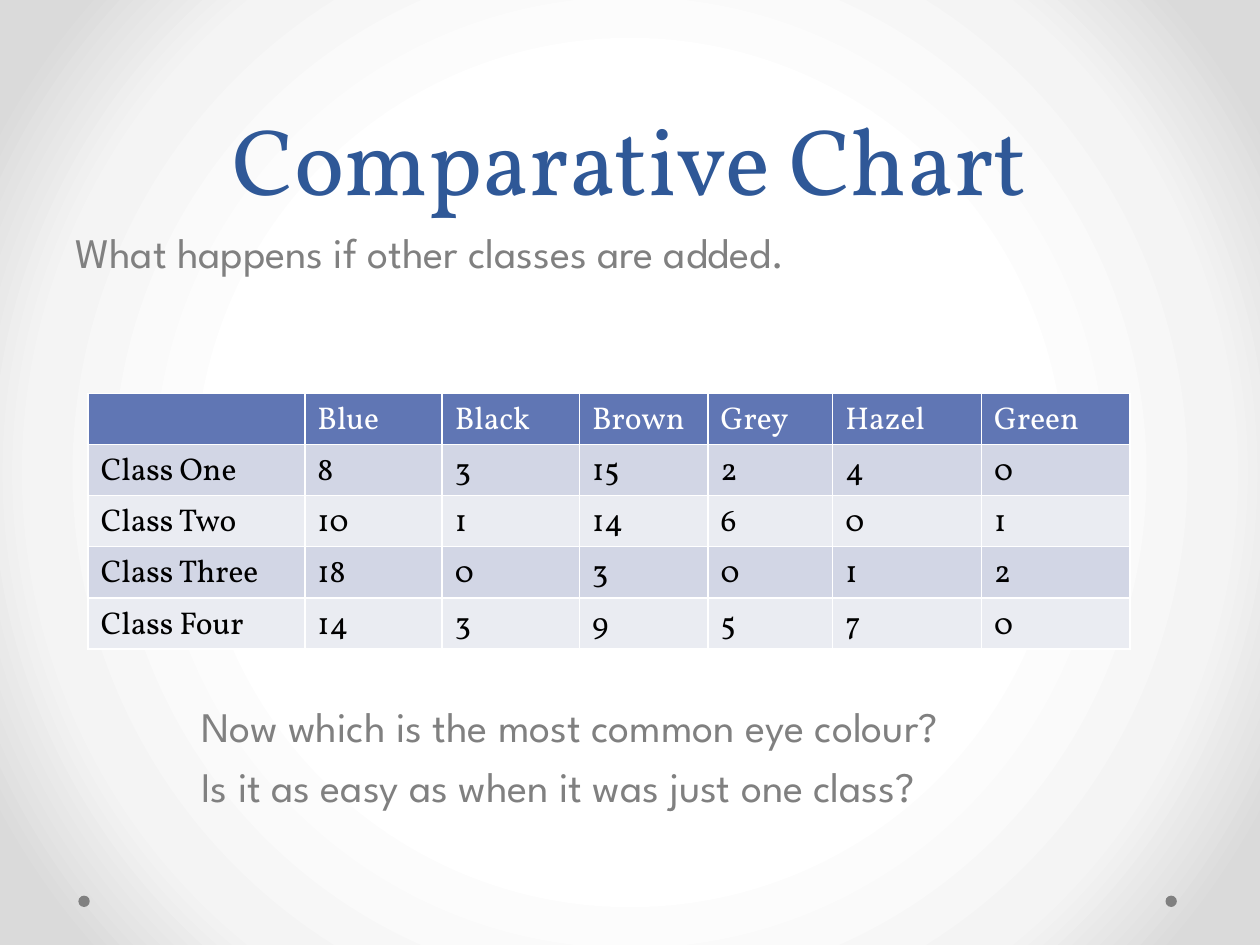
"""Builds a slide comparing eye colours across four classes."""
import pptx
import pptx.dml.color
import pptx.enum.shapes
import pptx.enum.text
import pptx.oxml
import pptx.oxml.ns
import pptx.util

Pt = pptx.util.Pt
RGBColor = pptx.dml.color.RGBColor

NAVY = RGBColor(0x2F, 0x58, 0x97)
GREY = RGBColor(0x80, 0x80, 0x80)
WHITE = RGBColor(0xFF, 0xFF, 0xFF)
BLACK = RGBColor(0x00, 0x00, 0x00)
HEADER = RGBColor(0x60, 0x76, 0xB4)
BANDS = [RGBColor(0xD2, 0xD6, 0xE5), RGBColor(0xEA, 0xEC, 0xF2)]
GLOW = [(50, "FFFFFF"), (76, "F4F4F4"), (92, "DADADA")]

EYE_COLOURS = ["", "Blue", "Black", "Brown", "Grey", "Hazel", "Green"]
CLASS_COUNTS = [
    ["Class One", 8, 3, 15, 2, 4, 0],
    ["Class Two", 10, 1, 14, 6, 0, 1],
    ["Class Three", 18, 0, 3, 0, 1, 2],
    ["Class Four", 14, 3, 9, 5, 7, 0],
]
COLUMN_WIDTHS = [123.8, 78.5, 78.5, 73.4, 71.3, 85, 85]
ROW_HEIGHT = 29.2
REMARKS = [
    ("What happens if other classes are added.", 5.5, 0),
    ("Now which is the most common eye colour?", 242, 72),
    ("Is it as easy as when it was just one class?", 5.5, 72),
]


class EyeColourSlide:
    styles = {
        "title": {"name": "Vollkorn", "size": Pt(54), "bold": False},
        "remark": {"name": "League Spartan", "size": Pt(24), "bold": False},
        "cell": {"name": "Vollkorn", "size": Pt(18), "bold": False},
    }

    def __init__(self, deck):
        self.slide = deck.slides.add_slide(deck.slide_layouts[5])

    def add_words(self, paragraph, words, style, colour):
        run = paragraph.add_run()
        run.text = words
        for attribute, value in self.styles[style].items():
            setattr(run.font, attribute, value)
        run.font.color.rgb = colour

    def background(self, stops):
        self.slide.background.fill.gradient()
        gradient = self.slide.element.find(".//" + pptx.oxml.ns.qn("a:gradFill"))
        marks = "".join(
            f'<a:gs pos="{position * 1000}"><a:srgbClr val="{colour}"/></a:gs>'
            for position, colour in stops
        )
        glow = pptx.oxml.parse_xml(
            f'<a:gradFill {pptx.oxml.ns.nsdecls("a")} rotWithShape="1">'
            f'<a:gsLst>{marks}</a:gsLst><a:path path="circle">'
            '<a:fillToRect l="50000" t="50000" r="50000" b="50000"/>'
            "</a:path></a:gradFill>"
        )
        gradient.getparent().replace(gradient, glow)

    def dot(self, left, top, size):
        dot = self.slide.shapes.add_shape(
            pptx.enum.shapes.MSO_SHAPE.OVAL, Pt(left), Pt(top), Pt(size), Pt(size)
        )
        dot.shadow.inherit = False
        dot.fill.solid()
        dot.fill.fore_color.rgb = GREY
        dot.line.fill.background()

    def title(self, words, left, top, width, height):
        heading = self.slide.shapes.title
        place = {"left": left, "top": top, "width": width, "height": height}
        for attribute, value in place.items():
            setattr(heading, attribute, Pt(value))
        heading.text_frame.vertical_anchor = pptx.enum.text.MSO_ANCHOR.BOTTOM
        paragraph = heading.text_frame.paragraphs[0]
        paragraph.alignment = pptx.enum.text.PP_ALIGN.CENTER
        paragraph.line_spacing = Pt(58)
        self.add_words(paragraph, words, "title", NAVY)

    def remarks(self, lines, left, top, width, height):
        frame = self.slide.shapes.add_textbox(
            Pt(left), Pt(top), Pt(width), Pt(height)
        ).text_frame
        frame.word_wrap = True
        for index, (words, space_before, indent) in enumerate(lines):
            paragraph = frame.add_paragraph() if index else frame.paragraphs[0]
            paragraph.space_before = Pt(space_before)
            paragraph._p.get_or_add_pPr().set("marL", str(Pt(indent)))
            self.add_words(paragraph, words, "remark", GREY)

    def table(self, header, counts, left, top):
        rows = [header] + counts
        grid = self.slide.shapes.add_table(
            len(rows), len(header), Pt(left), Pt(top),
            Pt(sum(COLUMN_WIDTHS)), Pt(ROW_HEIGHT * len(rows)),
        ).table
        for column, width in zip(grid.columns, COLUMN_WIDTHS):
            column.width = Pt(width)
        for row_index, row in enumerate(rows):
            fill = BANDS[(row_index - 1) % 2] if row_index else HEADER
            colour = BLACK if row_index else WHITE
            for column_index, value in enumerate(row):
                cell = grid.cell(row_index, column_index)
                cell.fill.solid()
                cell.fill.fore_color.rgb = fill
                if value != "":
                    paragraph = cell.text_frame.paragraphs[0]
                    self.add_words(paragraph, str(value), "cell", colour)


def main():
    deck = pptx.Presentation()
    deck.slide_width, deck.slide_height = Pt(720), Pt(540)
    page = EyeColourSlide(deck)
    page.background(GLOW)
    for left in (666, 44.8):
        page.dot(left, 511.8, 6.5)
    page.title("Comparative Chart", 36, 0, 648, 126)
    page.remarks(REMARKS, 36, 126, 648, 356.4)
    page.table(EYE_COLOURS, CLASS_COUNTS, 50.4, 224.8)
    deck.save("out.pptx")


if __name__ == "__main__":
    main()
